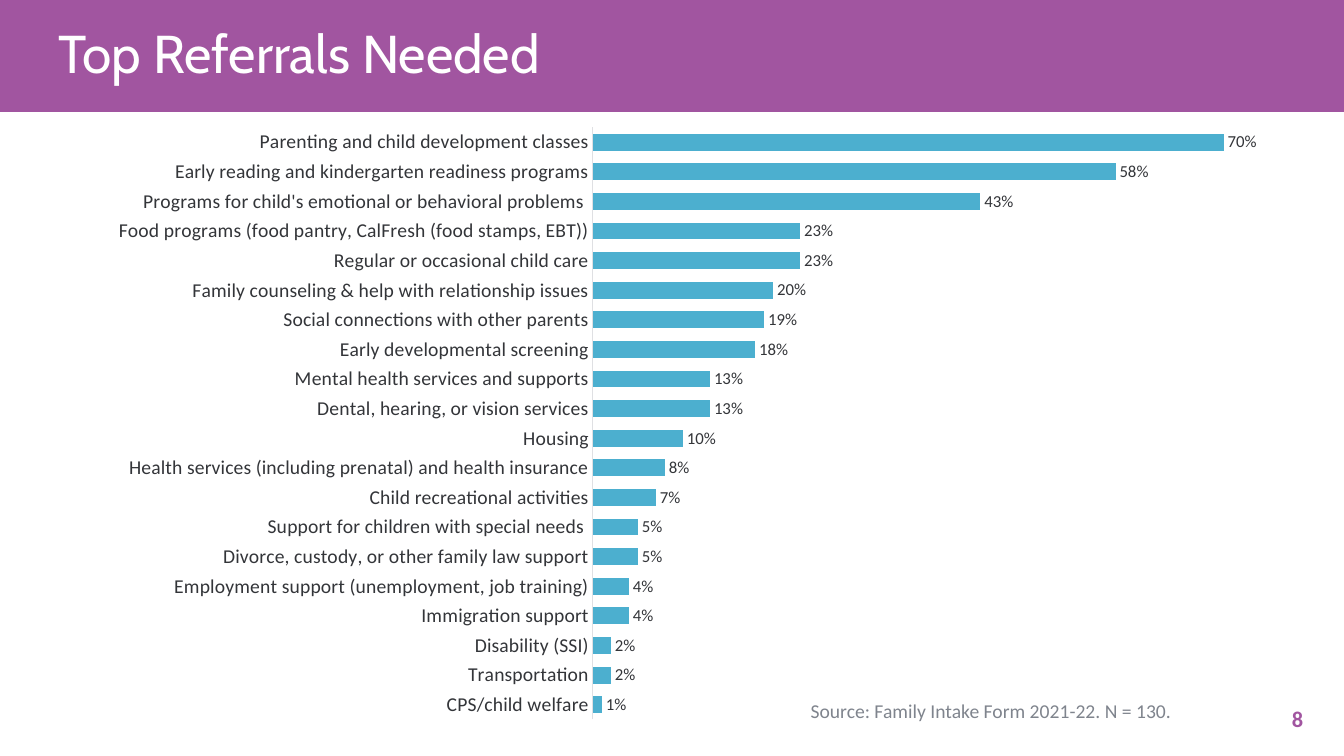
from dataclasses import dataclass

from lxml.etree import SubElement
from pptx import Presentation
from pptx.chart.data import CategoryChartData
from pptx.dml.color import RGBColor
from pptx.enum.chart import XL_CHART_TYPE, XL_LABEL_POSITION, XL_TICK_LABEL_POSITION, XL_TICK_MARK
from pptx.enum.shapes import MSO_SHAPE
from pptx.enum.text import MSO_ANCHOR, PP_ALIGN
from pptx.oxml import parse_xml
from pptx.oxml.ns import nsdecls, qn
from pptx.util import Pt

PURPLE, BLUE, WHITE = "A155A0", "4CAFCF", "FFFFFF"
DARK, GREY, AXIS_GREY = "333539", "7F848D", "DFE0E3"
BODY_FONT, TITLE_FONT = "Calibri", "Cabin"


@dataclass
class Box:
    left: float
    top: float
    width: float
    height: float

    def lengths(self) -> tuple:
        return Pt(self.left), Pt(self.top), Pt(self.width), Pt(self.height)


@dataclass
class Referral:
    need: str
    share: float


REFERRALS = [
    Referral("Parenting and child development classes", 0.7),
    Referral("Early reading and kindergarten readiness programs", 0.58),
    Referral("Programs for child's emotional or behavioral problems ", 0.43),
    Referral("Food programs (food pantry, CalFresh (food stamps, EBT))", 0.23),
    Referral("Regular or occasional child care", 0.23),
    Referral("Family counseling & help with relationship issues", 0.2),
    Referral("Social connections with other parents", 0.19),
    Referral("Early developmental screening", 0.18),
    Referral("Mental health services and supports", 0.13),
    Referral("Dental, hearing, or vision services", 0.13),
    Referral("Housing", 0.1),
    Referral("Health services (including prenatal) and health insurance", 0.08),
    Referral("Child recreational activities", 0.07),
    Referral("Support for children with special needs ", 0.05),
    Referral("Divorce, custody, or other family law support", 0.05),
    Referral("Employment support (unemployment, job training)", 0.04),
    Referral("Immigration support", 0.04),
    Referral("Disability (SSI)", 0.02),
    Referral("Transportation", 0.02),
    Referral("CPS/child welfare", 0.01),
]


def rgb(color: str) -> RGBColor:
    return RGBColor.from_string(color)


def style_font(font, size: float, color: str, name: str = BODY_FONT, bold: bool = False) -> None:
    font.size, font.name, font.bold = Pt(size), name, bold
    font.color.rgb = rgb(color)


def write(sp, text: str, *, size: float, color: str, name: str = BODY_FONT, bold: bool = False,
          align=PP_ALIGN.LEFT, anchor=MSO_ANCHOR.TOP, indent: float = 0, spacing: float = 1.0) -> None:
    tf = sp.text_frame
    tf.word_wrap = True
    tf.vertical_anchor = anchor
    p = tf.paragraphs[0]
    p.alignment, p.line_spacing = align, spacing
    if indent:
        p._p.get_or_add_pPr().set("marL", str(Pt(indent)))
    r = p.add_run()
    r.text = text
    style_font(r.font, size, color, name, bold)


def place_plot(chart, chart_box: Box, plot_box: Box) -> None:
    """Fix the inner plot area, given in points on the slide."""
    plot_area = chart._chartSpace.chart.plotArea
    for old in plot_area.findall(qn("c:layout")):
        plot_area.remove(old)
    layout = parse_xml(f"<c:layout {nsdecls('c')}/>")
    manual = SubElement(layout, qn("c:manualLayout"))
    settings = {
        "layoutTarget": "inner", "xMode": "edge", "yMode": "edge",
        "x": (plot_box.left - chart_box.left) / chart_box.width,
        "y": (plot_box.top - chart_box.top) / chart_box.height,
        "w": plot_box.width / chart_box.width,
        "h": plot_box.height / chart_box.height,
    }
    for tag, value in settings.items():
        SubElement(manual, qn(f"c:{tag}")).set("val", str(value))
    plot_area.insert(0, layout)


def add_referral_chart(s, box: Box, plot_box: Box) -> None:
    data = CategoryChartData(number_format="0%")
    data.categories = [referral.need for referral in REFERRALS]
    data.add_series("Series 1", [referral.share for referral in REFERRALS])
    chart = s.shapes.add_chart(XL_CHART_TYPE.BAR_CLUSTERED, *box.lengths(), data).chart
    chart.has_legend = chart.has_title = False
    style_font(chart.font, 10, DARK)
    place_plot(chart, box, plot_box)

    needs = chart.category_axis
    needs.reverse_order = True
    needs.major_tick_mark = needs.minor_tick_mark = XL_TICK_MARK.NONE
    needs.tick_label_position = XL_TICK_LABEL_POSITION.NEXT_TO_AXIS
    needs.format.line.color.rgb = rgb(AXIS_GREY)
    needs.format.line.width = Pt(0.75)
    style_font(needs.tick_labels.font, 14, DARK)

    shares = chart.value_axis
    shares.minimum_scale, shares.maximum_scale = 0, 0.8
    shares.has_major_gridlines = False
    shares.major_tick_mark = shares.minor_tick_mark = XL_TICK_MARK.NONE
    shares.visible = False

    plot = chart.plots[0]
    plot.gap_width = 75
    plot.vary_by_categories = False
    fill = plot.series[0].format.fill
    fill.solid()
    fill.fore_color.rgb = rgb(BLUE)
    labels = plot.series[0].data_labels
    labels.show_value = True
    labels.position = XL_LABEL_POSITION.OUTSIDE_END
    labels.number_format, labels.number_format_is_linked = "0%", False
    style_font(labels.font, 12, DARK)


def main() -> None:
    prs = Presentation()
    prs.slide_width, prs.slide_height = Pt(960), Pt(540)
    s = prs.slides.add_slide(prs.slide_layouts.get_by_name("Title Only"))

    banner = s.shapes.add_shape(MSO_SHAPE.RECTANGLE, *Box(0, 0, 960, 80).lengths())
    banner.shadow.inherit = False
    banner.fill.solid()
    banner.fill.fore_color.rgb = rgb(PURPLE)
    banner.line.fill.background()
    s.shapes._spTree.insert(2, banner._element)

    title = s.shapes.title
    title.left, title.top, title.width, title.height = Box(34.5, 19.5, 888.5, 41).lengths()
    write(title, "Top Referrals Needed", size=38, color=WHITE, name=TITLE_FONT,
          anchor=MSO_ANCHOR.MIDDLE, spacing=0.9)

    add_referral_chart(s, Box(67.5, 81.5, 892, 439), Box(423.5, 91, 515, 423))

    number = s.shapes.add_textbox(*Box(722, 499, 216, 29).lengths())
    write(number, "8", size=16, color=PURPLE, bold=True, align=PP_ALIGN.RIGHT, anchor=MSO_ANCHOR.MIDDLE)
    source = s.shapes.add_textbox(*Box(557.5, 496, 286.5, 24.5).lengths())
    write(source, "Source: Family Intake Form 2021-22. N = 130.", size=14, color=GREY, indent=14.4)

    prs.save("out.pptx")


if __name__ == "__main__":
    main()
